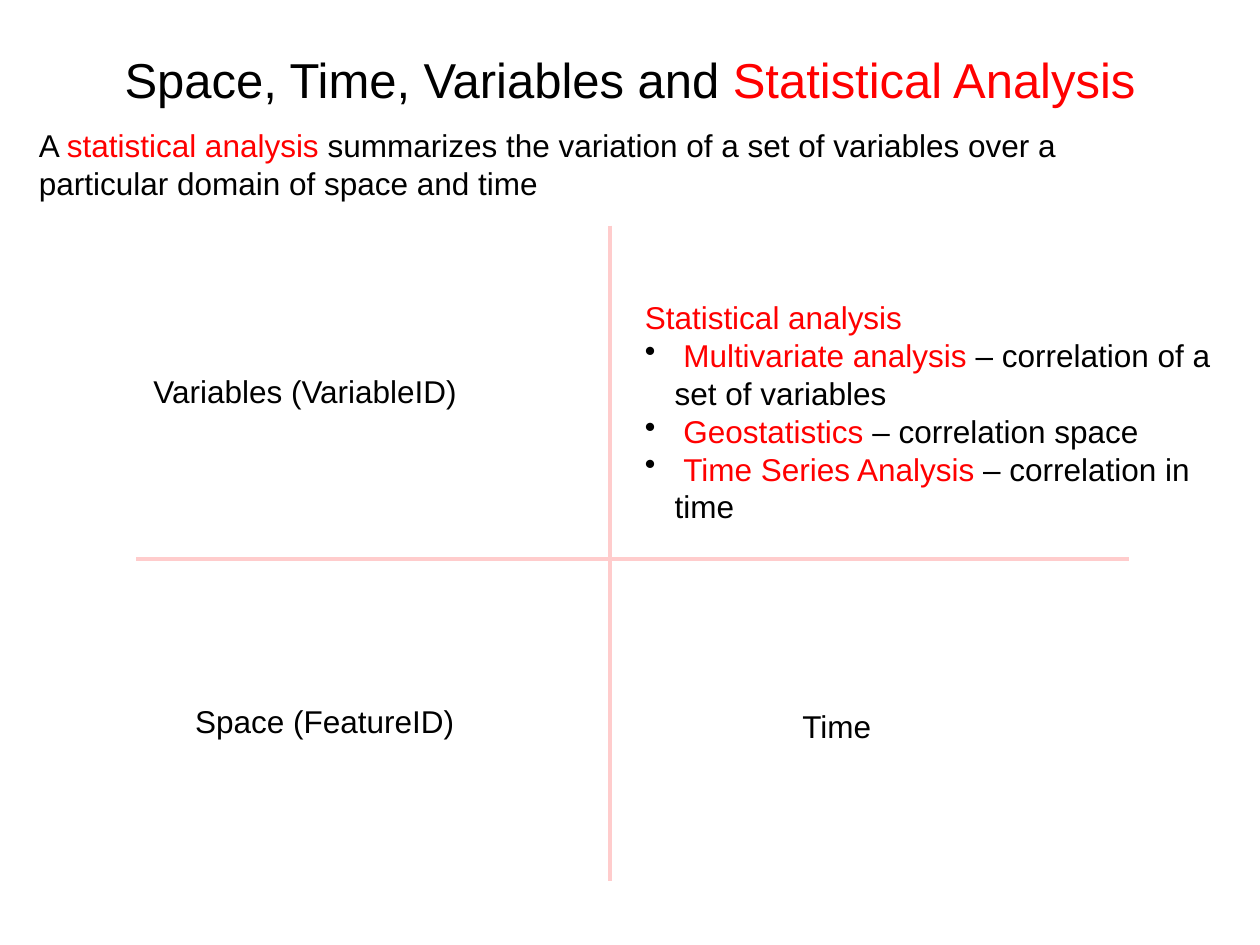
from lxml.etree import SubElement
from pptx import Presentation
from pptx.dml.color import RGBColor
from pptx.enum.shapes import MSO_CONNECTOR
from pptx.enum.text import MSO_ANCHOR, PP_ALIGN
from pptx.oxml.ns import qn
from pptx.util import Pt

BLACK = RGBColor(0x00, 0x00, 0x00)
RED = RGBColor(0xFF, 0x00, 0x00)
PINK = RGBColor(0xFF, 0xCC, 0xCC)


def add_text(page, left, top, width, height, paragraphs, size=18, wrap=True):
    """Add a text box; each paragraph is a list of (text, colour) spans."""
    box = page.shapes.add_textbox(Pt(left), Pt(top), Pt(width), Pt(height))
    frame = box.text_frame
    frame.word_wrap = wrap
    for index, spans in enumerate(paragraphs):
        para = frame.add_paragraph() if index else frame.paragraphs[0]
        for text, colour in spans:
            span = para.add_run()
            span.text = text
            span.font.color.rgb = colour
        para.font.name = "Arial"
        para.font.size = Pt(size)
        for span in para.runs:
            span.font.name = "Arial"
            span.font.size = Pt(size)
    return frame


def add_bullet(para, indent):
    properties = para._p.get_or_add_pPr()
    properties.set("marL", str(Pt(indent)))
    properties.set("indent", str(-Pt(indent)))
    bullet = SubElement(properties, qn("a:buChar"))
    bullet.set("char", "•")
    properties.insert(0, bullet)


deck = Presentation()
deck.slide_width, deck.slide_height = Pt(720), Pt(540)
page = deck.slides.add_slide(deck.slide_layouts[6])

# Title
title = add_text(page, 36, 0, 648, 90, [
    [("Space, Time, Variables and ", BLACK), ("Statistical Analysis", RED)],
], size=28)
title.vertical_anchor = MSO_ANCHOR.MIDDLE
title.paragraphs[0].alignment = PP_ALIGN.CENTER

# Axes that divide the page into quadrants
for start_x, start_y, end_x, end_y in [
    (348.5, 129, 348.5, 503.5),
    (78, 319.7, 645, 319.7),
]:
    axis = page.shapes.add_connector(
        MSO_CONNECTOR.STRAIGHT, Pt(start_x), Pt(start_y), Pt(end_x), Pt(end_y))
    axis.line.color.rgb = PINK
    axis.line.width = Pt(2.25)
    SubElement(axis._element.spPr, qn("a:effectLst"))

# Quadrant labels
for label, left, top, width in [
    ("Variables (VariableID)", 80.6, 208.8, 189.4),
    ("Space (FeatureID)", 104.4, 397.4, 164.2),
    ("Time", 451.4, 400.3, 54),
]:
    add_text(page, left, top, width, 28.8, [[(label, BLACK)]], wrap=False)

# Kinds of statistical analysis
kinds = [
    ("Multivariate analysis ", "– correlation of a set of variables"),
    ("Geostatistics ", "– correlation space"),
    ("Time Series Analysis ", "– correlation in time"),
]
analysis = add_text(page, 361.4, 167, 358.6, 116.6, [
    [("Statistical analysis", RED)],
    *[[(" ", BLACK), (kind, RED), (meaning, BLACK)] for kind, meaning in kinds],
])
for para in analysis.paragraphs[1:]:
    add_bullet(para, 17)

# Definition
add_text(page, 15.1, 68.4, 639.4, 51.1, [[
    ("A ", BLACK),
    ("statistical analysis ", RED),
    ("summarizes the variation of a set of variables over a particular "
     "domain of space and time", BLACK),
]])

deck.save("out.pptx")
